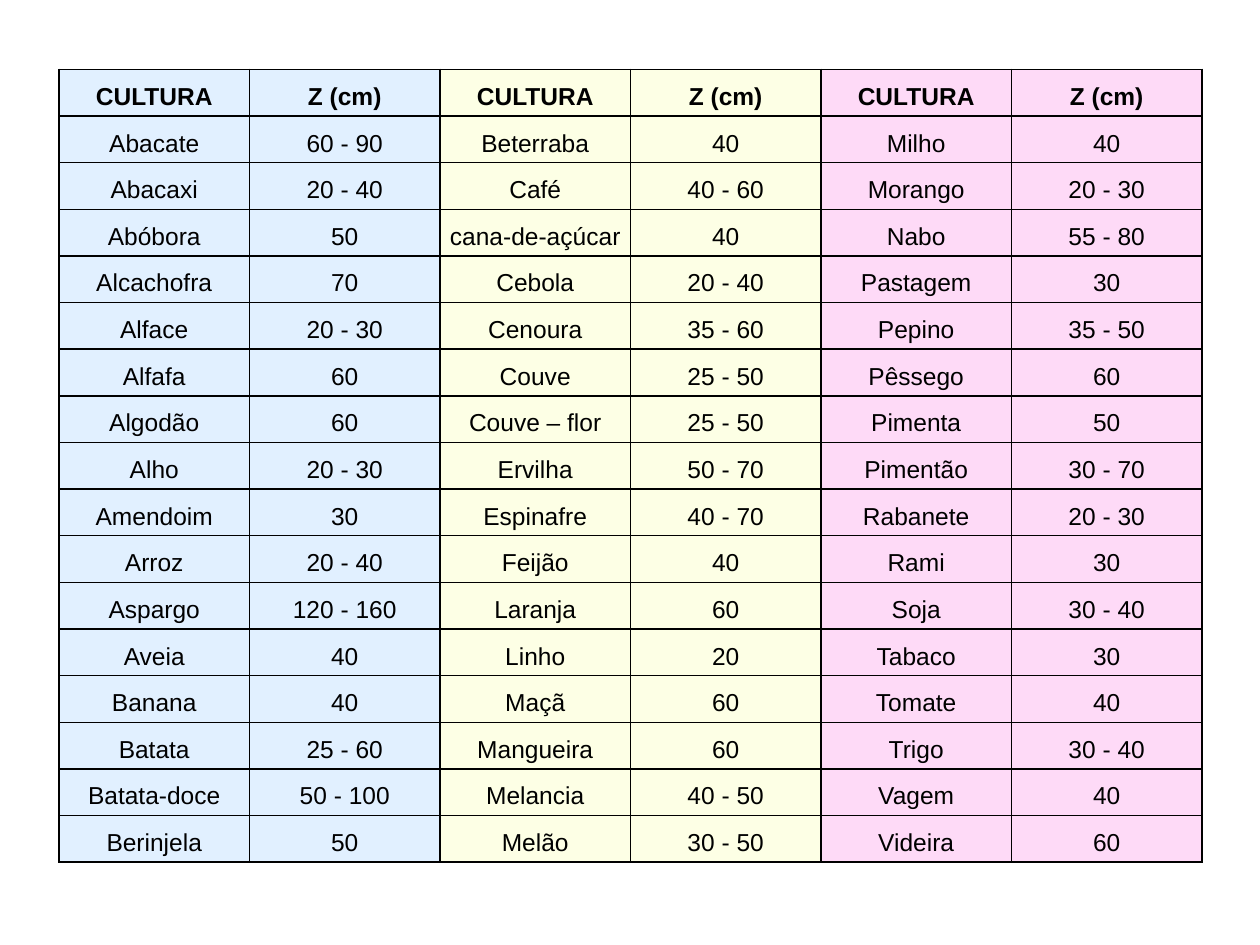
from dataclasses import dataclass

from lxml import etree
from pptx import Presentation
from pptx import util as u
from pptx.dml.color import RGBColor
from pptx.enum import text
from pptx.oxml.ns import qn


@dataclass(frozen=True)
class Theme:
    font: str = "Arial"
    size: int = 14
    ink: str = "000000"
    border: float = 1
    line_spacing: float = 1.5
    group_fills: tuple = ("E1F0FF", "FDFFE5", "FEDAF7")


HEADINGS = ("CULTURA", "Z (cm)")

# Crops and their effective root depth, one list per colour group
CROP_GROUPS = (
    (
        ("Abacate", "60 - 90"), ("Abacaxi", "20 - 40"), ("Abóbora", "50"),
        ("Alcachofra", "70"), ("Alface", "20 - 30"), ("Alfafa", "60"),
        ("Algodão", "60"), ("Alho", "20 - 30"), ("Amendoim", "30"),
        ("Arroz", "20 - 40"), ("Aspargo", "120 - 160"), ("Aveia", "40"),
        ("Banana", "40"), ("Batata", "25 - 60"), ("Batata-doce", "50 - 100"),
        ("Berinjela", "50"),
    ),
    (
        ("Beterraba", "40"), ("Café", "40 - 60"), ("cana-de-açúcar", "40"),
        ("Cebola", "20 - 40"), ("Cenoura", "35 - 60"), ("Couve", "25 - 50"),
        ("Couve – flor", "25 - 50"), ("Ervilha", "50 - 70"),
        ("Espinafre", "40 - 70"), ("Feijão", "40"), ("Laranja", "60"),
        ("Linho", "20"), ("Maçã", "60"), ("Mangueira", "60"),
        ("Melancia", "40 - 50"), ("Melão", "30 - 50"),
    ),
    (
        ("Milho", "40"), ("Morango", "20 - 30"), ("Nabo", "55 - 80"),
        ("Pastagem", "30"), ("Pepino", "35 - 50"), ("Pêssego", "60"),
        ("Pimenta", "50"), ("Pimentão", "30 - 70"), ("Rabanete", "20 - 30"),
        ("Rami", "30"), ("Soja", "30 - 40"), ("Tabaco", "30"),
        ("Tomate", "40"), ("Trigo", "30 - 40"), ("Vagem", "40"),
        ("Videira", "60"),
    ),
)


class SlideBuilder:
    def __init__(self, slide, theme):
        self.slide = slide
        self.theme = theme

    def crop_table(self, groups, left, top, column_width, row_height):
        """Place the groups side by side, each under its own headings."""
        row_count = 1 + max(len(crops) for crops in groups)
        column_count = len(HEADINGS) * len(groups)
        crop_table = self.slide.shapes.add_table(
            row_count, column_count, left, top,
            column_width * column_count, row_height * row_count).table
        crop_table.horz_banding = False
        for column in crop_table.columns:
            column.width = column_width
        for row in crop_table.rows:
            row.height = row_height

        for g, (crops, fill) in enumerate(zip(groups, self.theme.group_fills)):
            for r, entry in enumerate((HEADINGS, *crops)):
                for c, wording in enumerate(entry):
                    cell = crop_table.cell(r, g * len(HEADINGS) + c)
                    self.cell(cell, wording, fill, bold=r == 0)

    def cell(self, cell, wording, fill, bold):
        cell.margin_left = cell.margin_right = u.Cm(0.13)
        cell.margin_top = cell.margin_bottom = 0
        cell.vertical_anchor = text.MSO_ANCHOR.TOP
        # Borders go in before the fill, as the schema orders them
        self.borders(cell)
        cell.fill.solid()
        cell.fill.fore_color.rgb = RGBColor.from_string(fill)

        cell.text = wording
        paragraph = cell.text_frame.paragraphs[0]
        paragraph.alignment = text.PP_ALIGN.CENTER
        paragraph.line_spacing = self.theme.line_spacing
        paragraph.font.name = self.theme.font
        paragraph.font.size = u.Pt(self.theme.size)
        paragraph.font.bold = bold
        paragraph.font.color.rgb = RGBColor.from_string(self.theme.ink)

    def borders(self, cell):
        properties = cell._tc.get_or_add_tcPr()
        for side in ("a:lnL", "a:lnR", "a:lnT", "a:lnB"):
            line = etree.SubElement(properties, qn(side),
                                    w=str(u.Pt(self.theme.border)))
            solid = etree.SubElement(line, qn("a:solidFill"))
            etree.SubElement(solid, qn("a:srgbClr"), val=self.theme.ink)


def main():
    deck = Presentation()
    deck.slide_width, deck.slide_height = u.Cm(25.4), u.Cm(19.05)
    blank_layout = deck.slide_layouts[6]
    builder = SlideBuilder(deck.slides.add_slide(blank_layout), Theme())

    # Root depth table
    builder.crop_table(CROP_GROUPS, left=u.Cm(1.19), top=u.Cm(1.4),
                       column_width=u.Cm(3.84), row_height=u.Cm(0.94))
    deck.save("out.pptx")


if __name__ == "__main__":
    main()
